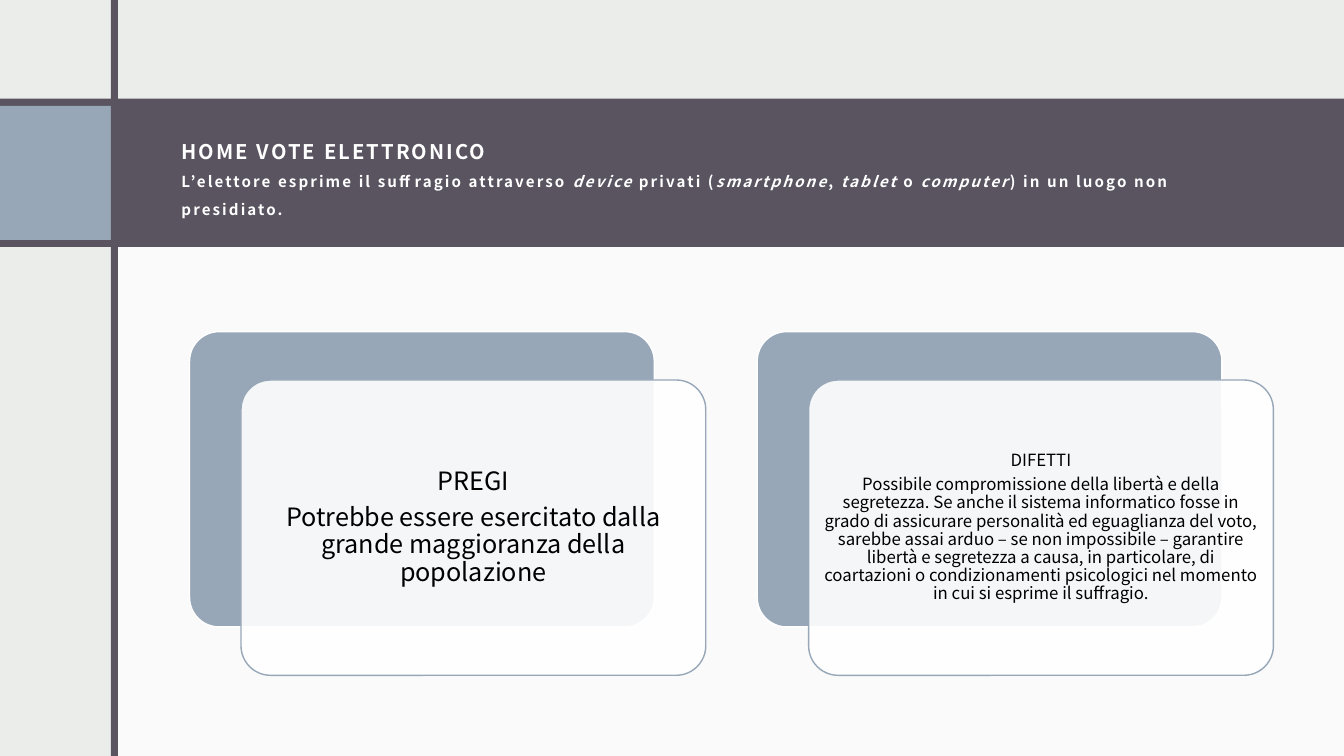
from dataclasses import dataclass

from lxml import etree
from pptx import Presentation
from pptx.dml.color import RGBColor
from pptx.enum.shapes import MSO_SHAPE
from pptx.enum.text import MSO_ANCHOR, PP_ALIGN
from pptx.oxml.ns import qn
from pptx.util import Inches, Pt

RECT = MSO_SHAPE.RECTANGLE
ROUND = MSO_SHAPE.ROUNDED_RECTANGLE
MIDDLE = MSO_ANCHOR.MIDDLE
CENTER = PP_ALIGN.CENTER


@dataclass(frozen=True)
class Theme:
    font: str = "Noto Sans CJK JP"
    paper: str = "EBEDEB"
    dark: str = "595460"
    accent: str = "97A7B8"
    white: str = "FFFFFF"
    black: str = "000000"
    title: float = 14.4
    subtitle: float = 10.8
    large: float = 18
    small: float = 12
    tracking: float = 1.5


THEME = Theme()
SLIDE_W, SLIDE_H = 13.33, 7.5
RULE = 0.07

SUBTITLE = [
    ("L’elettore esprime il suffragio attraverso ", False),
    ("device ", True),
    ("privati (", False),
    ("smartphone", True),
    (", ", False),
    ("tablet", True),
    (" o ", False),
    ("computer", True),
    (") in un luogo non presidiato.", False),
]
CARDS = [
    ("PREGI",
     "Potrebbe essere esercitato dalla grande maggioranza della popolazione",
     THEME.large, 0.07),
    ("DIFETTI",
     "Possibile compromissione della libertà e della segretezza. Se anche il "
     "sistema informatico fosse in grado di assicurare personalità ed "
     "eguaglianza del voto, sarebbe assai arduo – se non impossibile – "
     "garantire libertà e segretezza a causa, in particolare, di coartazioni o "
     "condizionamenti psicologici nel momento in cui si esprime il suffragio.",
     THEME.small, 0.05),
]


def rgb(color):
    return RGBColor.from_string(color)


def add_box(s, kind, x, y, w, h, fill, line=None, opacity=100):
    sp = s.shapes.add_shape(kind, Inches(x), Inches(y), Inches(w), Inches(h))
    sp.shadow.inherit = False
    sp.fill.solid()
    sp.fill.fore_color.rgb = rgb(fill)
    if opacity < 100:
        color = sp.fill._xPr.find(qn("a:solidFill"))[0]
        etree.SubElement(color, qn("a:alpha"), val=str(opacity * 1000))
    if line:
        sp.line.color.rgb = rgb(line)
        sp.line.width = Pt(1)
    else:
        sp.line.fill.background()
    if kind == ROUND:
        sp.adjustments[0] = 0.1
    return sp


def add_text_frame(s, x, y, w, h, inset, bottom):
    tf = s.shapes.add_textbox(Inches(x), Inches(y), Inches(w), Inches(h)).text_frame
    tf.word_wrap = True
    tf.vertical_anchor = MIDDLE
    tf.margin_left = tf.margin_right = tf.margin_top = Inches(inset)
    tf.margin_bottom = Inches(bottom)
    return tf


def add_run(p, text, size, color):
    r = p.add_run()
    r.text = text
    r.font.name = THEME.font
    r.font.size = Pt(size)
    r.font.color.rgb = rgb(color)
    return r


def add_title_run(p, text, size, italic=False):
    r = add_run(p, text, size, THEME.white)
    r.font.bold = True
    r.font.italic = italic
    r._r.get_or_add_rPr().set("spc", str(int(THEME.tracking * 100)))


def add_backdrop(s, x, y):
    """Pale content panel from (x, y) to the lower right corner."""
    s.background.fill.solid()
    s.background.fill.fore_color.rgb = rgb(THEME.paper)
    add_box(s, RECT, x, y, SLIDE_W - x, SLIDE_H - y, THEME.white, opacity=75)


def add_header(s, x, y, w, h):
    """Dark band with the title, crossed at the left by a vertical rule."""
    rule_x = x + 1.1
    add_box(s, RECT, x, y, w, h, THEME.dark)
    add_box(s, RECT, x, y + RULE, rule_x - x, h - 2 * RULE, THEME.accent)
    add_box(s, RECT, rule_x, 0, RULE, SLIDE_H, THEME.dark)

    tf = add_text_frame(s, x + 1.68, y + 0.16, 10.95, 1.13, 0.12, 0.1)
    p = tf.paragraphs[0]
    p.line_spacing = 1.5
    add_title_run(p, "HOME VOTE ELETTRONICO", THEME.title)
    p.add_line_break()
    for text, italic in SUBTITLE:
        add_title_run(p, text, THEME.subtitle, italic)


def add_card(s, x, y, w, h, heading, body, size, inset):
    """Translucent text card lying over a solid one, offset down and right."""
    dx, dy, pad = 0.51, 0.48, 0.09
    card_w, card_h = w - dx, h - dy
    add_box(s, ROUND, x, y, card_w, card_h, THEME.accent, THEME.white)
    add_box(s, ROUND, x + dx, y + dy, card_w, card_h, THEME.white, THEME.accent, 90)

    tf = add_text_frame(s, x + dx + pad, y + dy + pad,
                        card_w - 2 * pad, card_h - 2 * pad, inset, inset)
    for i, text in enumerate((heading, body)):
        p = tf.add_paragraph() if i else tf.paragraphs[0]
        p.alignment = CENTER
        p.line_spacing = 0.9
        p.space_after = Pt(size * 0.35)
        add_run(p, text, size, THEME.black)


def main():
    prs = Presentation()
    prs.slide_width, prs.slide_height = Inches(SLIDE_W), Inches(SLIDE_H)
    s = prs.slides.add_slide(prs.slide_layouts[6])
    add_backdrop(s, 1.14, 2.33)
    add_header(s, 0, 0.98, SLIDE_W, 1.47)
    for i, card in enumerate(CARDS):
        add_card(s, 1.88 + i * 5.63, 3.29, 5.12, 3.41, *card)
    prs.save("out.pptx")


if __name__ == "__main__":
    main()
